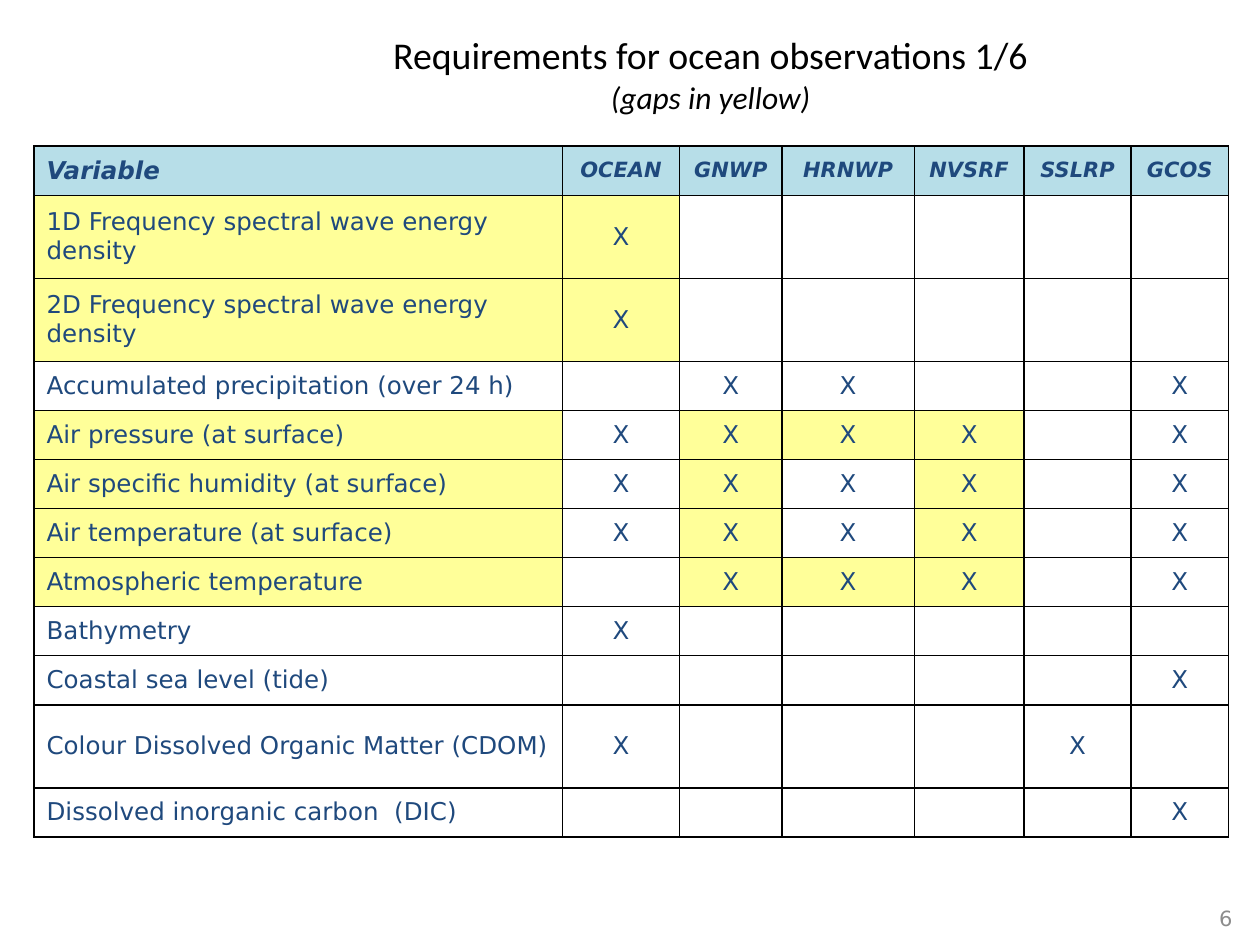
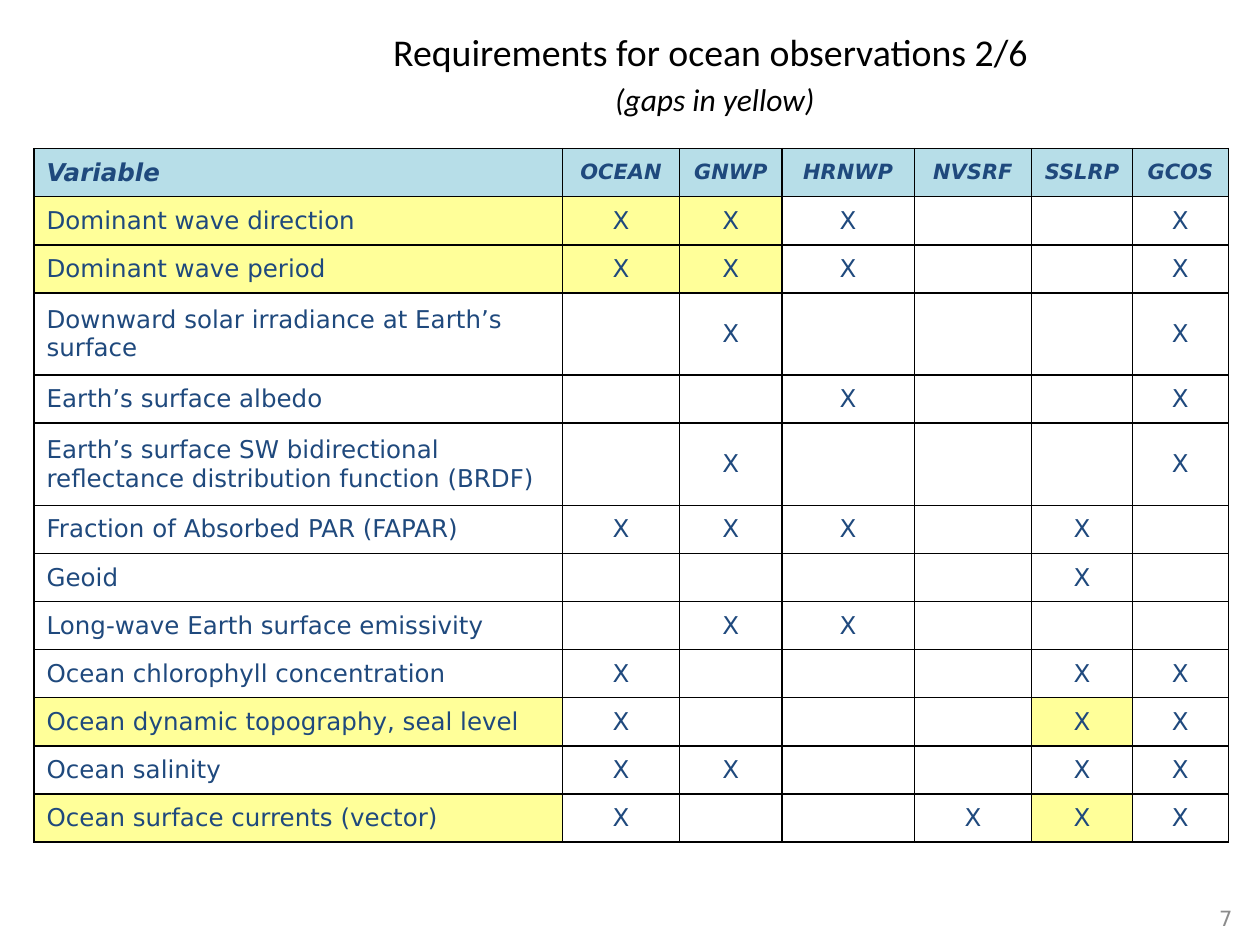
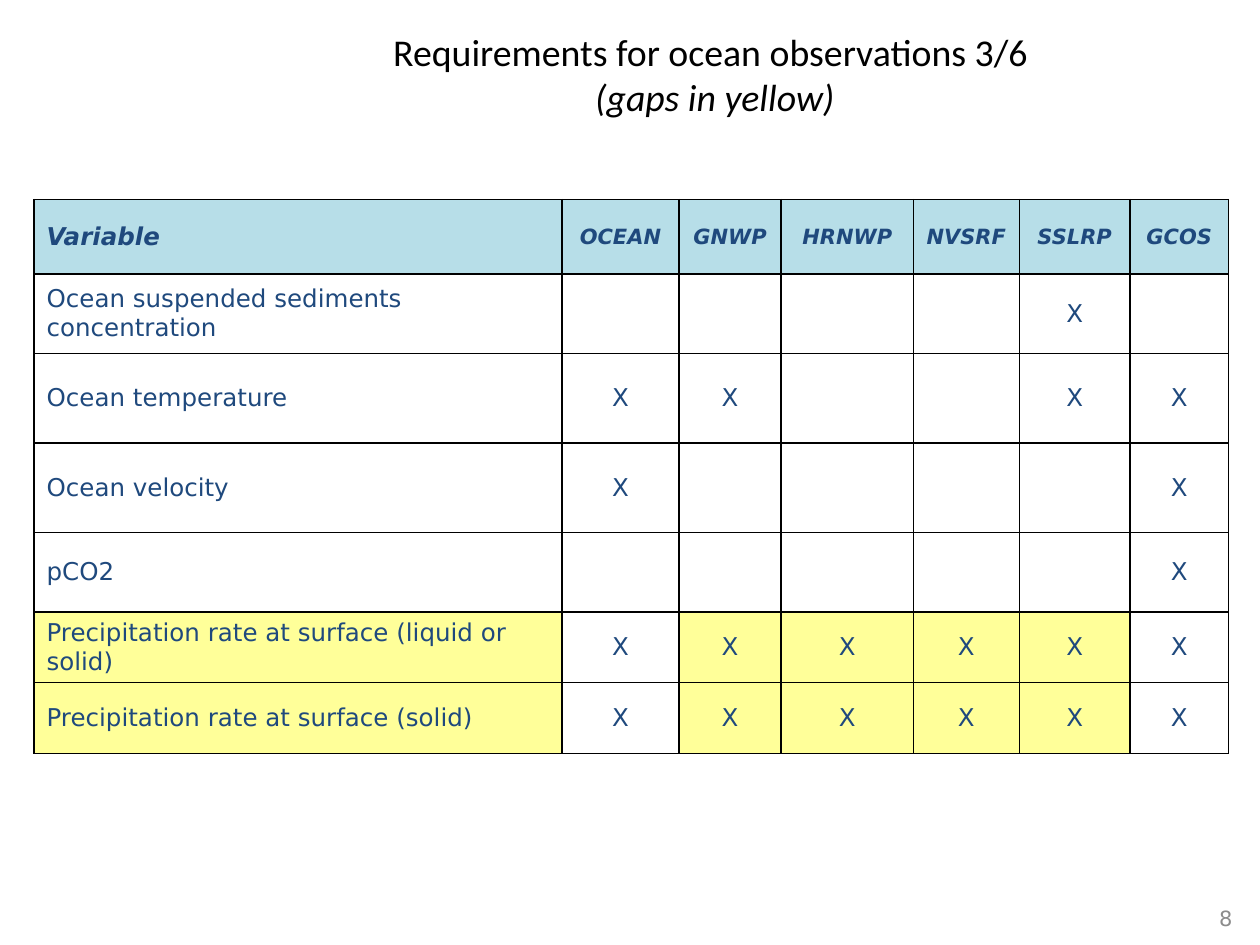
from lxml.etree import SubElement
from pptx import Presentation
from pptx.dml.color import RGBColor
from pptx.enum.text import MSO_ANCHOR, PP_ALIGN
from pptx.oxml.ns import qn
from pptx.util import Inches, Pt

SLIDE_WIDTH, SLIDE_HEIGHT = Inches(10), Inches(7.5)
NAVY, BLACK, GREY = "1F497D", "000000", "8C8C8C"
HEADER_BLUE, GAP_YELLOW, WHITE = "B7DEE8", "FFFF99", "FFFFFF"
TITLE_FONT, BODY_FONT = "Calibri", "DejaVu Sans"
NUMBER_BOX = (93.4, 94.93, 5.4, 4.53)
HEADERS = ["Variable", "OCEAN", "GNWP", "HRNWP", "NVSRF", "SSLRP", "GCOS"]

# Boxes are left, top, width, height in percent of the slide.
# Columns and row heights are weights that share out the table's box.
# Marks, one per application: X required, G required with a gap, - not required.
SLIDES = [
    dict(
        number=6, title_box=(15.3, 2.27, 82.2, 11.07), subtitle_size=18, indent="",
        table_box=(2.7, 15.47, 94.8, 73.1), header_height=39,
        columns=[419, 93, 81, 105, 87, 85, 77],
        rows=[
            ("1D Frequency spectral wave energy density", "G-----", 66),
            ("2D Frequency spectral wave energy density", "G-----", 66),
            ("Accumulated precipitation (over 24 h)", "-XX--X", 39),
            ("Air pressure (at surface)", "XGGG-X", 39),
            ("Air specific humidity (at surface)", "XGXG-X", 39),
            ("Air temperature (at surface)", "XGXG-X", 39),
            ("Atmospheric temperature", "-GGG-X", 39),
            ("Bathymetry", "X-----", 39),
            ("Coastal sea level (tide)", "-----X", 39),
            ("Colour Dissolved Organic Matter (CDOM)", "X---X-", 66),
            ("Dissolved inorganic carbon  (DIC)", "-----X", 39),
        ],
    ),
    dict(
        number=7, title_box=(15.3, 3.33, 82.2, 8.93), subtitle_size=18, indent=" ",
        table_box=(2.7, 15.73, 94.8, 73.4), header_height=38,
        columns=[419, 93, 81, 105, 93, 80, 76],
        rows=[
            ("Dominant wave direction", "GGX--X", 38),
            ("Dominant wave period", "GGX--X", 38),
            ("Downward solar irradiance at Earth’s surface", "-X---X", 65),
            ("Earth’s surface albedo", "--X--X", 38),
            ("Earth’s surface SW bidirectional reflectance distribution function (BRDF)",
             "-X---X", 65),
            ("Fraction of Absorbed PAR (FAPAR)", "XXX-X-", 38),
            ("Geoid", "----X-", 38),
            ("Long-wave Earth surface emissivity", "-XX---", 38),
            ("Ocean chlorophyll concentration", "X---XX", 38),
            ("Ocean dynamic topography, seal level", "X---GX", 38),
            ("Ocean salinity", "XX--XX", 38),
            ("Ocean surface currents (vector)", "X--XGX", 38),
        ],
    ),
    dict(
        number=8, title_box=(15.3, 3.33, 82.2, 8.93), subtitle_size=21.6, indent=" ",
        table_box=(2.7, 21.13, 94.8, 58.6), header_height=59,
        columns=[419, 93, 81, 105, 84, 88, 78],
        rows=[
            ("Ocean suspended sediments concentration", "----X-", 63),
            ("Ocean temperature", "XX--XX", 71),
            ("Ocean velocity", "X----X", 71),
            ("pCO2", "-----X", 63),
            ("Precipitation rate at surface (liquid or solid)", "XGGGGX", 56),
            ("Precipitation rate at surface (solid)", "XGGGGX", 56),
        ],
    ),
]


def color(hex_string):
    return RGBColor.from_string(hex_string)


def place(left, top, width, height):
    """Turn percentages of the slide into lengths."""
    return [int(share * side / 100) for share, side in
            zip((left, top, width, height), (SLIDE_WIDTH, SLIDE_HEIGHT) * 2)]


def add_text(paragraph, text, size=14, font=BODY_FONT, fill=NAVY, bold=False,
             italic=False, align=PP_ALIGN.LEFT):
    paragraph.alignment = align
    run = paragraph.add_run()
    run.text = text
    run.font.size, run.font.name = Pt(size), font
    run.font.bold, run.font.italic = bold, italic
    run.font.color.rgb = color(fill)


def add_text_box(slide, box):
    """Add a wrapping, vertically centred box and return its first paragraph."""
    frame = slide.shapes.add_textbox(*place(*box)).text_frame
    frame.word_wrap = True
    frame.vertical_anchor = MSO_ANCHOR.MIDDLE
    return frame.paragraphs[0]


def add_title(slide, box, part, subtitle_size, indent):
    paragraph = add_text_box(slide, box)
    style = dict(font=TITLE_FONT, fill=BLACK, align=PP_ALIGN.CENTER)
    add_text(paragraph, f"Requirements for ocean observations {part}/6", size=21.6, **style)
    paragraph.add_line_break()
    if indent:
        add_text(paragraph, indent, size=21.6, **style)
    add_text(paragraph, "(gaps in yellow)", size=subtitle_size, italic=True, **style)


def add_slide_number(slide, number):
    add_text(add_text_box(slide, NUMBER_BOX), str(number), size=12, fill=GREY,
             align=PP_ALIGN.RIGHT)


def format_cell(cell, fill):
    properties = cell._tc.get_or_add_tcPr()
    for side in ("a:lnL", "a:lnR", "a:lnT", "a:lnB"):
        line = SubElement(properties, qn(side), w=str(Pt(1)))
        SubElement(SubElement(line, qn("a:solidFill")), qn("a:srgbClr"), val=BLACK)
    cell.fill.solid()
    cell.fill.fore_color.rgb = color(fill)
    cell.vertical_anchor = MSO_ANCHOR.MIDDLE
    cell.margin_top = cell.margin_bottom = 0


def fill_row(table, row_index, texts, fills, **style):
    for column, (text, fill) in enumerate(zip(texts, fills)):
        cell = table.cell(row_index, column)
        format_cell(cell, fill)
        if text:
            size = 12 if row_index == 0 and column else 14
            align = PP_ALIGN.CENTER if column else PP_ALIGN.LEFT
            add_text(cell.text_frame.paragraphs[0], text, size=size, align=align, **style)


def add_requirements(slide, box, columns, header_height, rows):
    left, top, width, height = place(*box)
    table = slide.shapes.add_table(len(rows) + 1, len(columns), left, top, width, height).table
    table.first_row = table.horz_banding = False

    # Share out the box
    for column, weight in zip(table.columns, columns):
        column.width = width * weight // sum(columns)
    heights = [header_height] + [weight for _, _, weight in rows]
    for row, weight in zip(table.rows, heights):
        row.height = height * weight // sum(heights)

    # Header, then one row per variable; a variable with any gap is yellow
    fill_row(table, 0, HEADERS, [HEADER_BLUE] * len(HEADERS), bold=True, italic=True)
    for index, (variable, marks, _) in enumerate(rows, start=1):
        texts = [variable] + ["" if mark == "-" else "X" for mark in marks]
        gaps = ["G" in marks] + [mark == "G" for mark in marks]
        fill_row(table, index, texts, [GAP_YELLOW if gap else WHITE for gap in gaps])


def main():
    presentation = Presentation()
    presentation.slide_width, presentation.slide_height = SLIDE_WIDTH, SLIDE_HEIGHT
    for part, content in enumerate(SLIDES, start=1):
        slide = presentation.slides.add_slide(presentation.slide_layouts[6])
        add_title(slide, content["title_box"], part, content["subtitle_size"],
                  content["indent"])
        add_requirements(slide, content["table_box"], content["columns"],
                         content["header_height"], content["rows"])
        add_slide_number(slide, content["number"])
    presentation.save("out.pptx")


if __name__ == "__main__":
    main()
